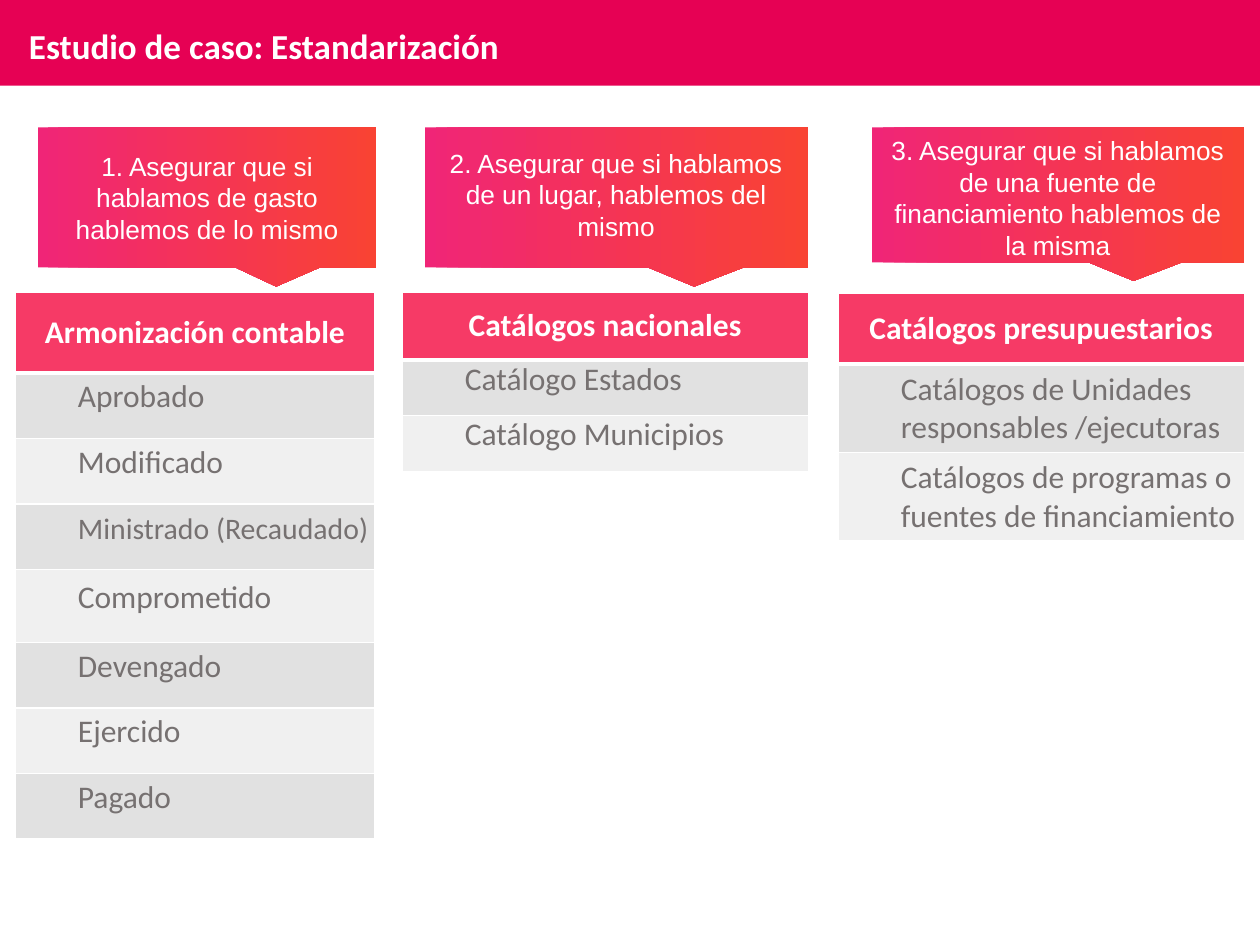
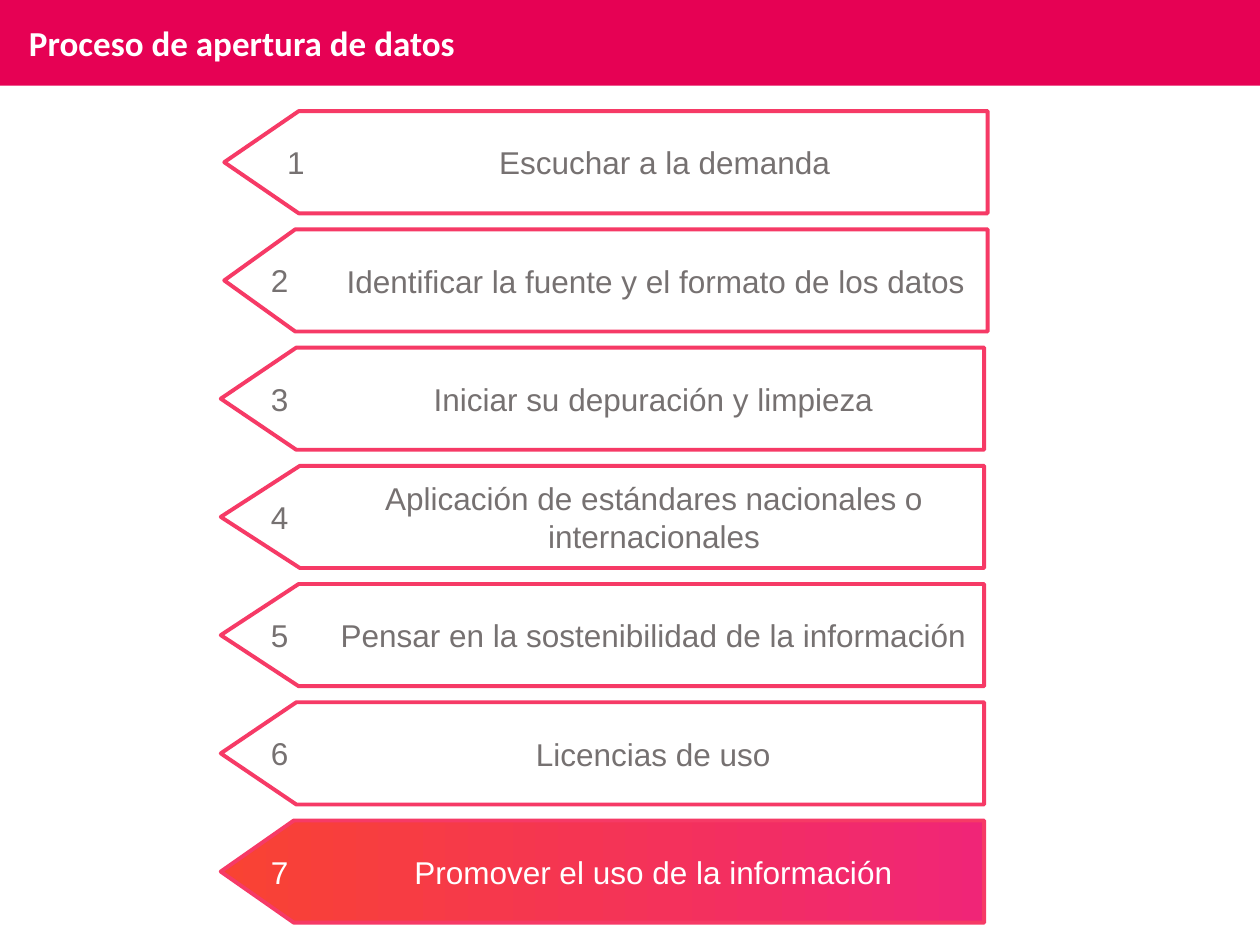
import lxml.etree
import pptx
import pptx.dml.color
import pptx.enum.shapes
import pptx.enum.text
import pptx.oxml.ns
import pptx.util

Cm = pptx.util.Cm
Pt = pptx.util.Pt
SHAPE = pptx.enum.shapes.MSO_SHAPE
ALIGN = pptx.enum.text.PP_ALIGN
ANCHOR = pptx.enum.text.MSO_ANCHOR
SIZE = pptx.enum.text.MSO_AUTO_SIZE
qn = pptx.oxml.ns.qn

BAND = "E60154"
ROSE = "F63A66"
PINK = "F02577"
FLAME = "F94333"
GREY = "767171"
WHITE = "FFFFFF"
STRIPES = ("E1E1E1", "F0F0F0")

TABLES = [
    ((0.3, 5.89, 7.26), "Armonización contable",
     ["Aprobado", "Modificado", "Ministrado (Recaudado)", "Comprometido",
      "Devengado", "Ejercido", "Pagado"],
     [1.63, 1.32, 1.32, 1.32, 1.47, 1.32, 1.32, 1.32], 12),
    ((8.1, 5.89, 8.2), "Catálogos nacionales",
     ["Catálogo Estados", "Catálogo Municipios"],
     [1.37, 1.12, 1.12], 12),
    ((16.89, 5.92, 8.2), "Catálogos presupuestarios",
     ["Catálogos de Unidades responsables /ejecutoras",
      "Catálogos de programas o fuentes de financiamiento"],
     [1.42, 1.4, 1.4], None),
]

GOALS = [
    (0.76, 6.83, 2.82, 2.9, 2.18,
     "1. Asegurar que si hablamos de gasto hablemos de lo mismo"),
    (8.56, 7.72, 2.82, 2.84, 2.18,
     "2. Asegurar que si hablamos de un lugar, hablemos del mismo"),
    (17.58, 7.49, 2.72, 2.59, 2.82,
     "3. Asegurar que si hablamos de una fuente de financiamiento "
     "hablemos de la misma"),
]

STEPS = [
    ("Escuchar a la demanda", 4.52, 0.729, 5.79, (6.81, 13.18, 0.76)),
    ("Identificar la fuente y el formato de los datos",
     4.52, 0.695, 5.46, (6.63, 13.18, 0.76)),
    ("Iniciar su depuración y limpieza",
     4.45, 0.739, 5.46, (6.58, 13.18, 0.76)),
    ("Aplicación de estándares nacionales o internacionales",
     4.45, 0.774, 5.46, (6.81, 12.75, 1.55)),
    ("Pensar en la sostenibilidad de la información",
     4.45, 0.762, 5.46, (6.58, 13.18, 0.76)),
    ("Licencias de uso", 4.45, 0.739, 5.46, (6.58, 13.18, 0.76)),
    ("Promover el uso de la información",
     4.45, 0.715, 5.46, (6.58, 13.18, 0.76)),
]


def tint(text):
    return pptx.dml.color.RGBColor.from_string(text)


def paint(item, color):
    item.fill.solid()
    item.fill.fore_color.rgb = tint(color)


def blend(shape):
    shape.fill.gradient()
    shape.fill.gradient_angle = 0
    for stop, color in zip(shape.fill.gradient_stops, (PINK, FLAME)):
        stop.color.rgb = tint(color)


def style(frame, size, color, font, bold=False, align=ALIGN.LEFT):
    for para in frame.paragraphs:
        para.alignment = align
        for run in para.runs:
            run.font.size = Pt(size)
            run.font.name = font
            run.font.bold = bold
            run.font.color.rgb = tint(color)


def add_form(shapes, kind, box):
    shape = shapes.add_shape(kind, *map(Cm, box))
    shape.shadow.inherit = False
    shape.line.fill.background()
    return shape


def add_text(shapes, box, text, size, color, align=ALIGN.CENTER):
    frame = shapes.add_textbox(*map(Cm, box)).text_frame
    frame.text = text
    frame.word_wrap = True
    frame.auto_size = SIZE.SHAPE_TO_FIT_TEXT
    style(frame, size, color, "Arial", align=align)
    return frame


def add_slide(deck, text, top, width):
    slide = deck.slides.add_slide(deck.slide_layouts[5])
    title = slide.shapes.title
    band = add_form(slide.shapes, SHAPE.RECTANGLE, (0, 0, 25.4, 1.73))
    paint(band, BAND)
    title.element.addprevious(band.element)
    title.left, title.top = Cm(0.33), Cm(top)
    title.width, title.height = Cm(width), Cm(1.12)
    frame = title.text_frame
    frame.text = text
    frame.word_wrap = True
    frame.auto_size = SIZE.SHAPE_TO_FIT_TEXT
    frame.vertical_anchor = ANCHOR.TOP
    style(frame, 20, WHITE, "Calibri", True)
    return slide


def add_edges(cell, top, bottom):
    props = cell._tc.get_or_add_tcPr()
    for side, width in (("L", 1), ("R", 1), ("T", top), ("B", bottom)):
        line = lxml.etree.SubElement(props, qn("a:ln" + side), w=str(Pt(width)))
        fill = lxml.etree.SubElement(line, qn("a:solidFill"))
        lxml.etree.SubElement(fill, qn("a:srgbClr"), val=WHITE)


def fill_head(cell, text):
    add_edges(cell, 1, 3)
    paint(cell, ROSE)
    cell.text = text
    cell.vertical_anchor = ANCHOR.MIDDLE
    style(cell.text_frame, 18, WHITE, "Calibri", True, ALIGN.CENTER)


def fill_item(cell, text, index, space):
    add_edges(cell, 1 if index else 3, 1)
    paint(cell, STRIPES[index % 2])
    cell.text = text
    cell.vertical_anchor = ANCHOR.MIDDLE
    cell.margin_left = cell.margin_right = 0
    para = cell.text_frame.paragraphs[0]
    para._p.get_or_add_pPr().set("marL", str(Cm(1.27)))
    if space:
        para.line_spacing = Pt(space)
    size = 17 if text.startswith("Ministrado") else 18
    style(cell.text_frame, size, GREY, "Calibri")


def add_list(slide, place, head, items, rows, space):
    left, top, width = map(Cm, place)
    table = slide.shapes.add_table(
        len(rows), 1, left, top, width, Cm(sum(rows))).table
    for row, height in zip(table.rows, rows):
        row.height = Cm(height)
    fill_head(table.cell(0, 0), head)
    for index, item in enumerate(items):
        fill_item(table.cell(index + 1, 0), item, index, space)


def add_goal(slide, left, width, height, top, tall, text):
    shape = add_form(slide.shapes, SHAPE.RECTANGULAR_CALLOUT,
                     (left, 2.57, width, height))
    shape.rotation = 180
    shape.element.spPr.find(qn("a:xfrm")).set("flipH", "1")
    shape.adjustments[0] = 0.204
    shape.adjustments[1] = -0.637
    blend(shape)
    add_text(slide.shapes, (left, top, width, tall), text, 15, WHITE)


def add_step(slide, number, top, text, left, notch, spot, label, last):
    shapes = slide.shapes.add_group_shape().shapes
    high = 2.06
    arrow = add_form(shapes, SHAPE.PENTAGON, (left, top, 15.39, high))
    arrow.rotation = 180
    arrow.adjustments[0] = notch
    if last:
        blend(arrow)
    else:
        arrow.fill.background()
    arrow.line.color.rgb = tint(ROSE)
    arrow.line.width = Pt(2.25)
    color = WHITE if last else GREY
    start, width, tall = label
    digit = add_text(shapes, (spot, top + (high - 0.76) / 2, 0.36, 0.76),
                     str(number), 18, color, ALIGN.LEFT)
    words = add_text(shapes, (start, top + (high - tall) / 2, width, tall),
                     text, 18, color)
    for frame in (digit, words):
        frame.vertical_anchor = ANCHOR.MIDDLE
        frame.margin_left = frame.margin_right = 0
        frame.margin_top = frame.margin_bottom = 0
    digit.word_wrap = False


def main():
    deck = pptx.Presentation()
    deck.slide_width, deck.slide_height = Cm(25.4), Cm(19.05)

    slide = add_slide(deck, "Estudio de caso: Estandarización", 0.36, 23.39)
    for table, goal in zip(TABLES, GOALS):
        add_list(slide, *table)
        add_goal(slide, *goal)

    slide = add_slide(deck, "Proceso de apertura de datos", 0.3, 14.68)
    first, final = 2.24, 16.54
    pitch = (final - first) / (len(STEPS) - 1)
    for index, step in enumerate(STEPS):
        add_step(slide, index + 1, first + index * pitch, *step,
                 last=index == len(STEPS) - 1)

    deck.save("out.pptx")


if __name__ == "__main__":
    main()
